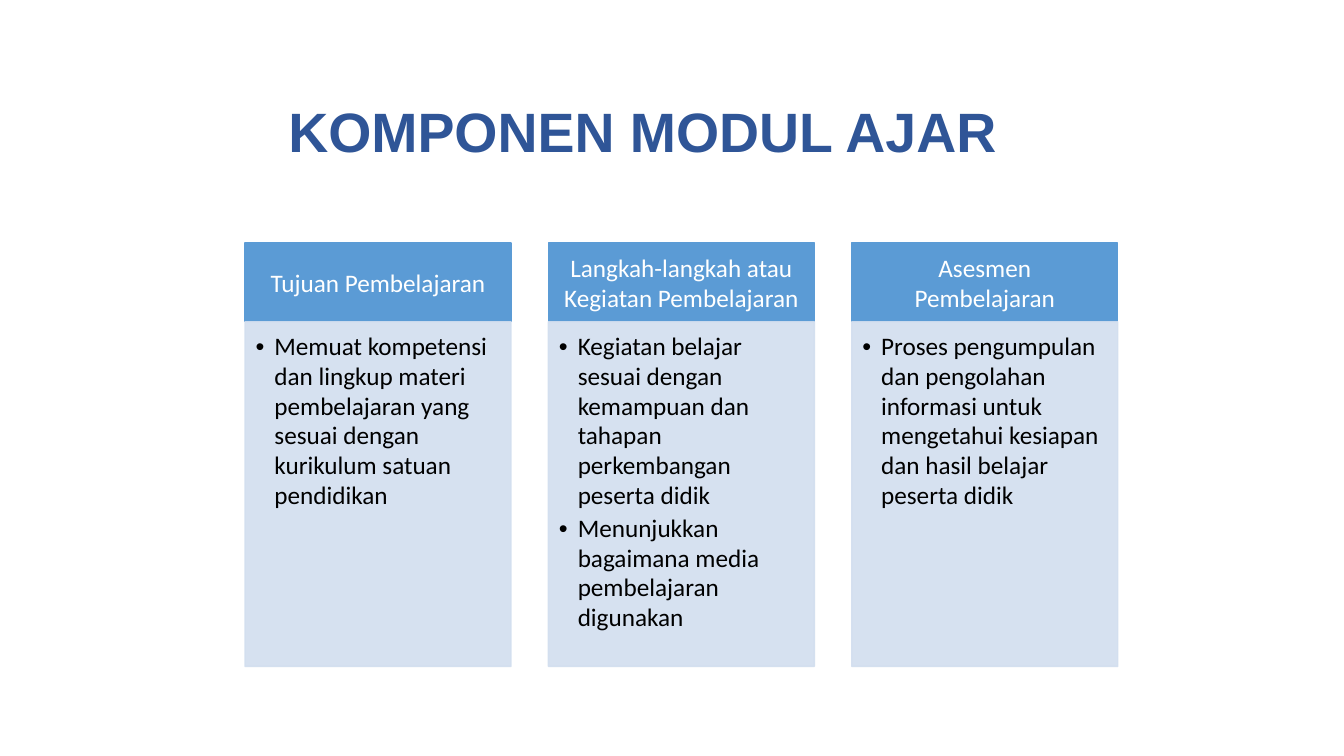
from dataclasses import dataclass

from lxml import etree
from pptx import Presentation
from pptx.dml.color import RGBColor
from pptx.enum.shapes import MSO_SHAPE
from pptx.enum.text import MSO_ANCHOR, MSO_AUTO_SIZE, PP_ALIGN
from pptx.oxml.ns import qn
from pptx.shapes.autoshape import Shape
from pptx.slide import Slide
from pptx.util import Pt

RECTANGLE = MSO_SHAPE.RECTANGLE
TOP, MIDDLE = MSO_ANCHOR.TOP, MSO_ANCHOR.MIDDLE
LEFT, CENTER = PP_ALIGN.LEFT, PP_ALIGN.CENTER
NO_AUTOFIT = MSO_AUTO_SIZE.NONE

COLUMN_LEFT, COLUMN_PITCH, COLUMN_WIDTH = 175, 216.7, 190
HEADER_TOP, HEADER_HEIGHT, BODY_HEIGHT = 173.5, 56.3, 246.2
BULLET_INDENT = 13.5
TEXT_SIZE = 18


@dataclass(frozen=True)
class Component:
    heading: str
    points: tuple[str, ...]


@dataclass(frozen=True)
class BoxStyle:
    fill: str
    opacity: int
    text_color: str
    anchor: MSO_ANCHOR
    alignment: PP_ALIGN
    insets: tuple[float, float, float, float]
    line_spacing: float
    space_after: float
    bulleted: bool


HEADER_STYLE = BoxStyle("5B9BD5", 100, "FFFFFF", MIDDLE, CENTER,
                        (10, 5.7, 10, 5.7), 1.0, 6.3, False)
BODY_STYLE = BoxStyle("D2DEEF", 90, "000000", TOP, LEFT,
                      (7.5, 7.5, 10, 11.3), 0.98, 2.7, True)

COMPONENTS = (
    Component("Tujuan Pembelajaran", (
        "Memuat kompetensi dan lingkup materi pembelajaran yang sesuai "
        "dengan kurikulum satuan pendidikan",
    )),
    Component("Langkah-langkah atau Kegiatan Pembelajaran", (
        "Kegiatan belajar sesuai dengan kemampuan dan tahapan "
        "perkembangan peserta didik",
        "Menunjukkan bagaimana media pembelajaran digunakan",
    )),
    Component("Asesmen Pembelajaran", (
        "Proses pengumpulan dan pengolahan informasi untuk mengetahui "
        "kesiapan dan hasil belajar peserta didik",
    )),
)


def color(value: str) -> RGBColor:
    return RGBColor.from_string(value)


def add_run(paragraph, text: str, font_name: str, size: float,
            text_color: str, bold: bool = False) -> None:
    run = paragraph.add_run()
    run.text = text
    run.font.name = font_name
    run.font.size = Pt(size)
    run.font.bold = bold
    run.font.color.rgb = color(text_color)


def add_bullet(paragraph) -> None:
    properties = paragraph._p.get_or_add_pPr()
    properties.set("marL", str(Pt(BULLET_INDENT)))
    properties.set("indent", str(-Pt(BULLET_INDENT)))
    etree.SubElement(properties, qn("a:buFont")).set("typeface", "Arial")
    etree.SubElement(properties, qn("a:buChar")).set("char", "•")


def set_opacity(shape: Shape, percent: int) -> None:
    for fill_color in shape._element.spPr.iter(qn("a:srgbClr")):
        etree.SubElement(fill_color, qn("a:alpha")).set("val", str(percent * 1000))


def add_box(slide: Slide, left: float, top: float, height: float,
            texts: tuple[str, ...], style: BoxStyle) -> None:
    shape = slide.shapes.add_shape(RECTANGLE, Pt(left), Pt(top),
                                   Pt(COLUMN_WIDTH), Pt(height))
    shape.shadow.inherit = False
    shape.fill.solid()
    shape.fill.fore_color.rgb = color(style.fill)
    shape.line.color.rgb = color(style.fill)
    shape.line.width = Pt(1)
    if style.opacity < 100:
        set_opacity(shape, style.opacity)

    frame = shape.text_frame
    frame.word_wrap = True
    frame.vertical_anchor = style.anchor
    (frame.margin_left, frame.margin_top,
     frame.margin_right, frame.margin_bottom) = map(Pt, style.insets)
    for index, text in enumerate(texts):
        paragraph = frame.add_paragraph() if index else frame.paragraphs[0]
        paragraph.alignment = style.alignment
        paragraph.line_spacing = style.line_spacing
        paragraph.space_after = Pt(style.space_after)
        if style.bulleted:
            add_bullet(paragraph)
        add_run(paragraph, text, "Calibri", TEXT_SIZE, style.text_color)


def format_title(slide: Slide) -> None:
    title = slide.shapes.title
    title.left, title.top = Pt(198.7), Pt(51.1)
    title.width, title.height = Pt(575.3), Pt(90)
    frame = title.text_frame
    frame.auto_size = NO_AUTOFIT
    frame.word_wrap = True
    frame.vertical_anchor = MIDDLE
    paragraph = frame.paragraphs[0]
    paragraph.alignment = LEFT
    paragraph.line_spacing = 0.9
    paragraph.space_before = Pt(0)
    add_run(paragraph, "KOMPONEN MODUL AJAR", "Arial", 39.6, "2F5597", True)


def main() -> None:
    presentation = Presentation()
    presentation.slide_width, presentation.slide_height = Pt(960), Pt(540)
    slide = presentation.slides.add_slide(presentation.slide_layouts[5])
    format_title(slide)
    for index, component in enumerate(COMPONENTS):
        left = COLUMN_LEFT + index * COLUMN_PITCH
        add_box(slide, left, HEADER_TOP, HEADER_HEIGHT,
                (component.heading,), HEADER_STYLE)
        add_box(slide, left, HEADER_TOP + HEADER_HEIGHT, BODY_HEIGHT,
                component.points, BODY_STYLE)
    presentation.save("out.pptx")


if __name__ == "__main__":
    main()
